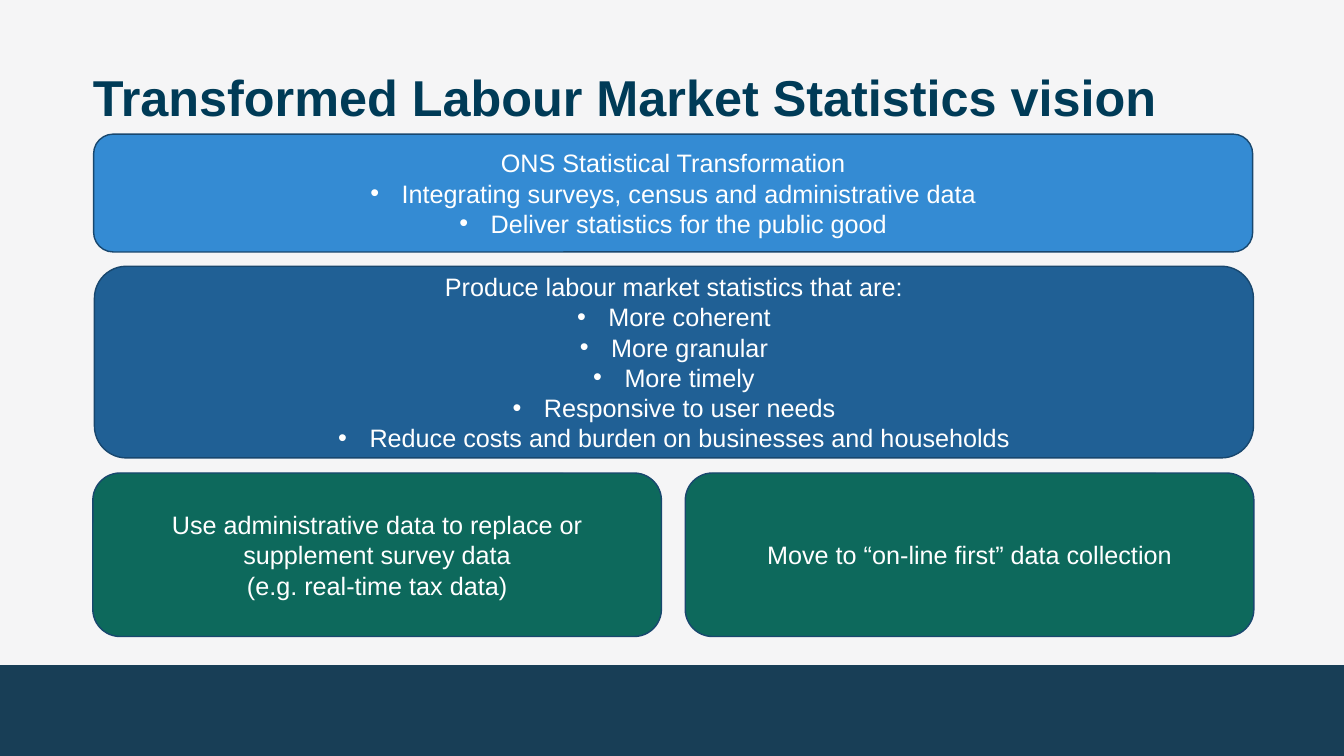
from dataclasses import dataclass

from lxml import etree
from pptx import Presentation
from pptx import util as u
from pptx.dml.color import RGBColor
from pptx.enum import shapes, text
from pptx.oxml.ns import qn

COLOURS = {
    "background": "F5F5F6",
    "footer": "183E56",
    "title": "003B57",
    "outline": "18476E",
    "transformation": "348BD3",
    "qualities": "206095",
    "methods": "0D695C",
    "white": "FFFFFF",
}
SLIDE_WIDTH, SLIDE_HEIGHT = 33.87, 19.05
LEFT, FULL_WIDTH = 2.34, 29.21
HALF_WIDTH = 14.33
RIGHT_HALF = LEFT + FULL_WIDTH + 0.05 - HALF_WIDTH
FOOTER_TOP = 16.76
BULLET_INDENT = 0.79


@dataclass(frozen=True)
class Panel:
    left: float
    top: float
    width: float
    height: float
    colour: str
    statements: tuple[str, ...]
    bullets: tuple[str, ...] = ()


PANELS = (
    Panel(LEFT + 0.02, 3.38, FULL_WIDTH, 2.97, "transformation",
          ("ONS Statistical Transformation",),
          ("Integrating surveys, census and administrative data",
           "Deliver statistics for the public good")),
    Panel(LEFT + 0.04, 6.71, FULL_WIDTH, 4.83, "qualities",
          ("Produce labour market statistics that are:",),
          ("More coherent", "More granular", "More timely",
           "Responsive to user needs",
           "Reduce costs and burden on businesses and households")),
    Panel(LEFT, 11.92, HALF_WIDTH, 4.12, "methods",
          ("Use administrative data to replace or supplement survey data",
           "(e.g. real-time tax data)")),
    Panel(RIGHT_HALF, 11.92, HALF_WIDTH, 4.12, "methods",
          ("Move to “on-line first” data collection",)),
)


def rgb(name: str) -> RGBColor:
    return RGBColor.from_string(COLOURS[name])


def add_bullet(paragraph) -> None:
    properties = paragraph._p.get_or_add_pPr()
    indent = u.Cm(BULLET_INDENT)
    properties.set("marL", str(indent))
    properties.set("indent", str(-indent))
    etree.SubElement(properties, qn("a:buFont"), typeface="Arial")
    etree.SubElement(properties, qn("a:buChar"), char="•")


def write(paragraph, words: str, *, size: float = 18, colour: str = "white",
          bold: bool = False, bullet: bool = False,
          align=text.PP_ALIGN.CENTER) -> None:
    if bullet:
        add_bullet(paragraph)
    paragraph.alignment = align
    run = paragraph.add_run()
    run.text = words
    run.font.name = "Arial"
    run.font.size = u.Pt(size)
    run.font.bold = bold
    run.font.color.rgb = rgb(colour)


def add_block(slide, kind, left: float, top: float, width: float,
              height: float, colour: str):
    block = slide.shapes.add_shape(
        kind, u.Cm(left), u.Cm(top), u.Cm(width), u.Cm(height))
    block.shadow.inherit = False
    block.fill.solid()
    block.fill.fore_color.rgb = rgb(colour)
    return block


def add_panel(slide, panel: Panel) -> None:
    block = add_block(slide, shapes.MSO_SHAPE.ROUNDED_RECTANGLE, panel.left,
                      panel.top, panel.width, panel.height, panel.colour)
    block.line.color.rgb = rgb("outline")
    block.line.width = u.Pt(1)
    frame = block.text_frame
    frame.word_wrap = True
    frame.vertical_anchor = text.MSO_ANCHOR.MIDDLE
    for number, words in enumerate(panel.statements + panel.bullets):
        paragraph = frame.add_paragraph() if number else frame.paragraphs[0]
        write(paragraph, words, bullet=number >= len(panel.statements))


def set_title(slide, words: str) -> None:
    title = slide.shapes.title
    title.left, title.top = u.Cm(LEFT), u.Cm(1.78)
    title.width, title.height = u.Cm(FULL_WIDTH), u.Cm(1.47)
    frame = title.text_frame
    frame.margin_left = frame.margin_right = 0
    frame.margin_top = frame.margin_bottom = 0
    frame.word_wrap = True
    frame.auto_size = text.MSO_AUTO_SIZE.SHAPE_TO_FIT_TEXT
    frame.vertical_anchor = text.MSO_ANCHOR.TOP
    heading = frame.paragraphs[0]
    heading.line_spacing = 0.95
    heading.space_after = u.Pt(10)
    write(heading, words, size=36, colour="title", bold=True,
          align=text.PP_ALIGN.LEFT)


def main() -> None:
    deck = Presentation()
    deck.slide_width, deck.slide_height = u.Cm(SLIDE_WIDTH), u.Cm(SLIDE_HEIGHT)
    slide = deck.slides.add_slide(deck.slide_layouts.get_by_name("Title Only"))
    slide.background.fill.solid()
    slide.background.fill.fore_color.rgb = rgb("background")
    footer = add_block(slide, shapes.MSO_SHAPE.RECTANGLE, 0, FOOTER_TOP,
                       SLIDE_WIDTH, SLIDE_HEIGHT - FOOTER_TOP, "footer")
    footer.line.fill.background()
    set_title(slide, "Transformed Labour Market Statistics vision")
    for panel in PANELS:
        add_panel(slide, panel)
    deck.save("out.pptx")


if __name__ == "__main__":
    main()
